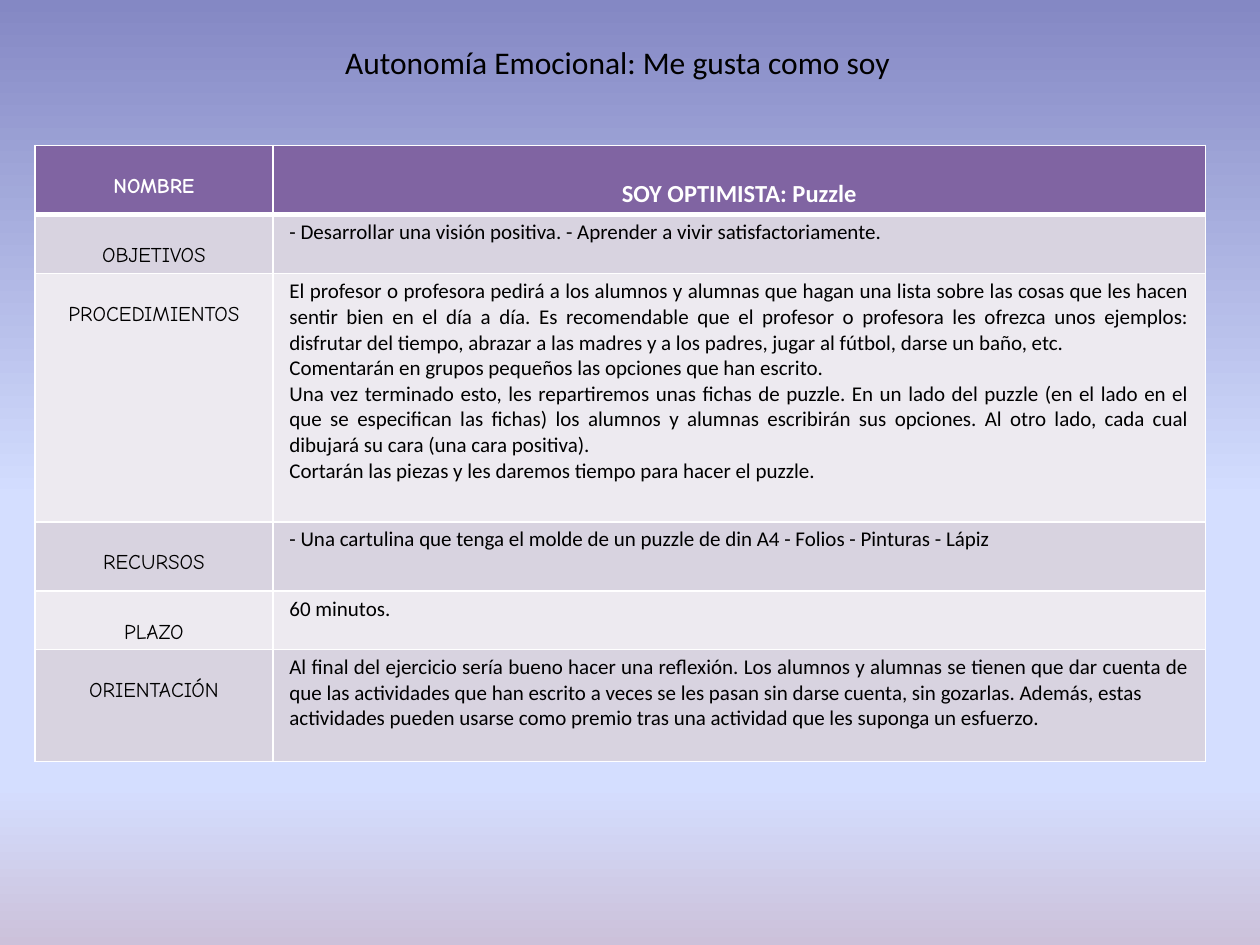
"""Build the activity slide with its title and planning table."""
import pptx
import pptx.util
import pptx.dml.color
import pptx.enum.text
import pptx.oxml
import pptx.oxml.ns

Pt = pptx.util.Pt
RGB = pptx.dml.color.RGBColor
Align = pptx.enum.text.PP_ALIGN
qn = pptx.oxml.ns.qn

BLACK = RGB(0, 0, 0)
WHITE = RGB(255, 255, 255)
PURPLE = RGB(0x80, 0x64, 0xA2)
DARK = RGB(0xD8, 0xD3, 0xE0)
LIGHT = RGB(0xED, 0xEA, 0xF0)
BLUE = RGB(0x84, 0x88, 0xC4)
SKY = RGB(0xD4, 0xDE, 0xFF)
MAUVE = RGB(0xCC, 0xC1, 0xDA)

STOPS = [(0, BLUE), (53, SKY), (83, SKY), (100, MAUVE)]
COLS = [136, 533]
ROWS = [
    (39.6, "NOMBRE", "SOY OPTIMISTA: Puzzle"),
    (33.8, "OBJETIVOS",
     "- Desarrollar una visión positiva. - Aprender a vivir satisfactoriamente."),
    (141.8, "PROCEDIMIENTOS",
     "El profesor o profesora pedirá a los alumnos y alumnas que hagan una lista "
     "sobre las cosas que les hacen sentir bien en el día a día. Es recomendable "
     "que el profesor o profesora les ofrezca unos ejemplos: disfrutar del tiempo, "
     "abrazar a las madres y a los padres, jugar al fútbol, darse un baño, etc.\n"
     "Comentarán en grupos pequeños las opciones que han escrito.\n"
     "Una vez terminado esto, les repartiremos unas fichas de puzzle. En un lado "
     "del puzzle (en el lado en el que se especifican las fichas) los alumnos y "
     "alumnas escribirán sus opciones. Al otro lado, cada cual dibujará su cara "
     "(una cara positiva).\n"
     "Cortarán las piezas y les daremos tiempo para hacer el puzzle."),
    (39.6, "RECURSOS",
     "- Una cartulina que tenga el molde de un puzzle de din A4 - Folios - "
     "Pinturas - Lápiz"),
    (33.2, "PLAZO", "60 minutos."),
    (64, "ORIENTACIÓN",
     "Al final del ejercicio sería bueno hacer una reflexión. Los alumnos y "
     "alumnas se tienen que dar cuenta de que las actividades que han escrito a "
     "veces se les pasan sin darse cuenta, sin gozarlas. Además, estas\n"
     "actividades pueden usarse como premio tras una actividad que les suponga "
     "un esfuerzo."),
]


def paint_back(slide):
    """Fill the background with a vertical gradient."""
    fill = slide.background.fill
    fill.gradient()
    fill.gradient_angle = 270
    stops = next(slide.element.iter(qn("a:gsLst")))
    stops.clear()
    for pos, color in STOPS:
        stop = stops.makeelement(qn("a:gs"), {"pos": str(pos * 1000)})
        stop.append(stop.makeelement(qn("a:srgbClr"), {"val": str(color)}))
        stops.append(stop)


def style_text(frame, font, size, color, align, bold=False):
    """Format every paragraph and run of a text frame."""
    for para in frame.paragraphs:
        para.alignment = align
        for run in para.runs:
            run.font.name = font
            run.font.size = Pt(size)
            run.font.bold = bold
            run.font.color.rgb = color


def add_title(slide, text):
    """Place the title."""
    title = slide.shapes.title
    title.left, title.top = Pt(190), Pt(21)
    title.width, title.height = Pt(351), Pt(29)
    frame = title.text_frame
    frame.text = text
    frame.auto_size = pptx.enum.text.MSO_AUTO_SIZE.NONE
    frame.vertical_anchor = pptx.enum.text.MSO_ANCHOR.TOP
    style_text(frame, "Calibri", 18, BLACK, Align.LEFT)


def add_edges(cell, widths):
    """Draw white borders, given the width of each side."""
    props = cell._tc.get_or_add_tcPr()
    for i, (side, width) in enumerate(widths.items()):
        line = pptx.oxml.parse_xml(
            f'<a:ln{side} {pptx.oxml.ns.nsdecls("a")} w="{Pt(width)}">'
            f'<a:solidFill><a:srgbClr val="{WHITE}"/></a:solidFill></a:ln{side}>')
        props.insert(i, line)


def fill_cell(cell, text, fill, top, edges, **style):
    """Set the text, fill, margins and borders of a cell."""
    cell.text_frame.text = text
    cell.margin_left = cell.margin_right = Pt(9.4)
    cell.margin_top, cell.margin_bottom = Pt(top), Pt(3)
    cell.fill.solid()
    cell.fill.fore_color.rgb = fill
    style_text(cell.text_frame, **style)
    add_edges(cell, edges)


def add_plan(slide):
    """Add the planning table."""
    high = sum(row[0] for row in ROWS)
    table = slide.shapes.add_table(
        len(ROWS), len(COLS), Pt(20), Pt(83), Pt(sum(COLS)), Pt(high)).table
    for col, width in zip(table.columns, COLS):
        col.width = Pt(width)
    for i, (height, label, text) in enumerate(ROWS):
        head = i == 0
        table.rows[i].height = Pt(height)
        fill = PURPLE if head else DARK if i % 2 else LIGHT
        color = WHITE if head else BLACK
        edges = {"L": 1, "R": 1, "T": 3 if i == 1 else 1, "B": 3 if head else 1}
        fill_cell(table.cell(i, 0), label, fill, 16.6, edges, font="Comic Neue",
                  size=12, color=color, align=Align.CENTER, bold=head)
        fill_cell(table.cell(i, 1), text, fill, 19.5 if head else 3, edges,
                  font="Calibri", size=14 if head else 12, color=color,
                  align=Align.CENTER if head else Align.JUSTIFY, bold=head)


def main():
    """Build and save the slide."""
    deck = pptx.Presentation()
    deck.slide_width, deck.slide_height = Pt(720), Pt(540)
    slide = deck.slides.add_slide(deck.slide_layouts[5])
    paint_back(slide)
    add_plan(slide)
    add_title(slide, "Autonomía Emocional: Me gusta como soy")
    deck.save("out.pptx")


if __name__ == "__main__":
    main()
